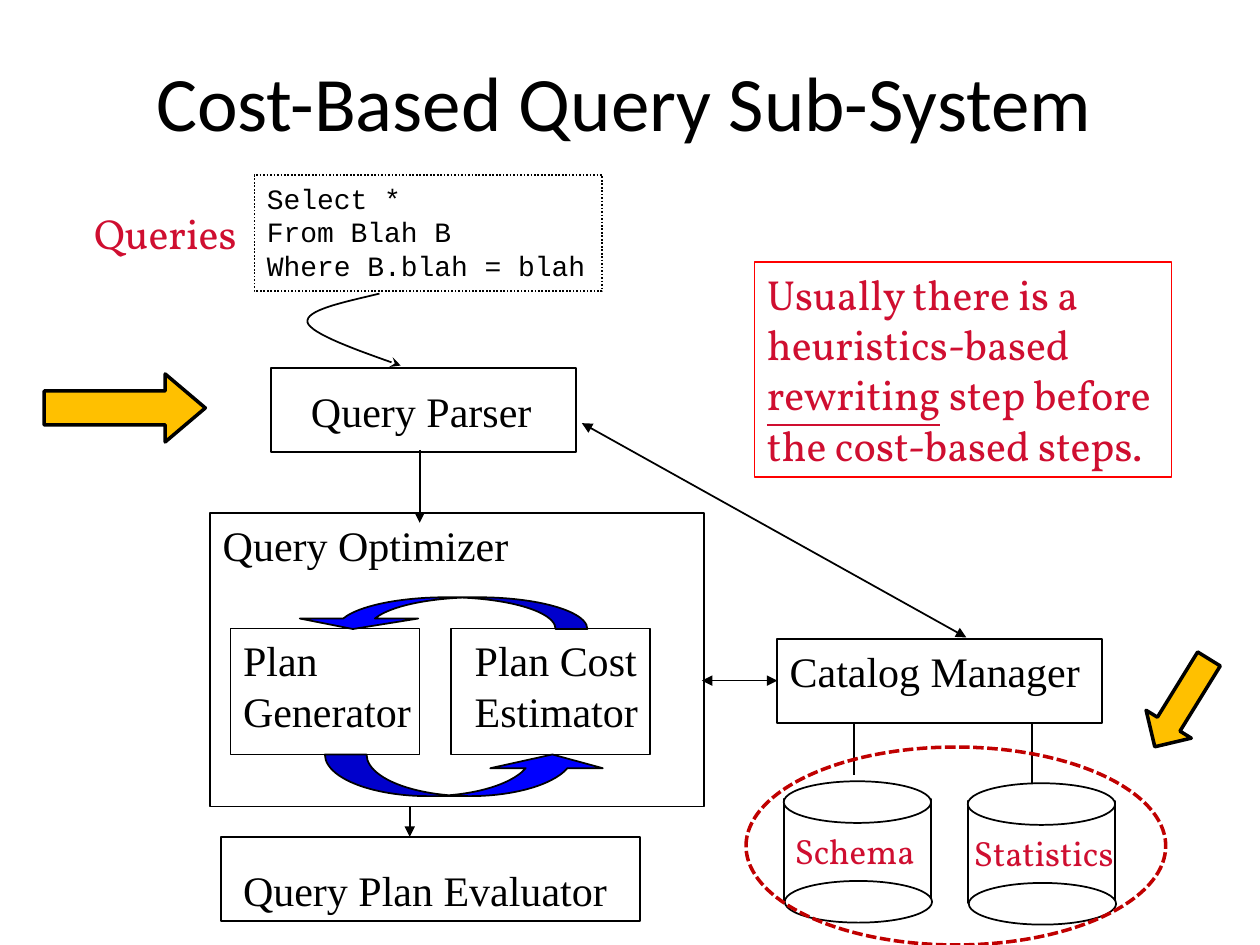
from lxml import etree
from pptx import Presentation
from pptx import util as u
from pptx.dml.color import RGBColor
from pptx.enum import dml, shapes, text
from pptx.oxml import ns

COLORS = {
    "black": "000000", "white": "FFFFFF", "blue": "0000FF", "gold": "FFC000",
    "red": "FF0000", "crimson": "CF0E30", "dark_red": "C00000",
}
SERIF, ACCENT = "Times New Roman", "Vollkorn"
PRESET = shapes.MSO_SHAPE
DASH = dml.MSO_LINE


def color(name):
    return RGBColor.from_string(COLORS[name])


def cm(values):
    return [u.Cm(value) for value in values]


def write_text(shape, lines, font=SERIF, size=24, fill="black", wrap=True,
               align=text.PP_ALIGN.LEFT, anchor=text.MSO_ANCHOR.TOP):
    frame = shape.text_frame
    frame.word_wrap = wrap
    frame.vertical_anchor = anchor
    for index, line in enumerate(lines):
        paragraph = frame.add_paragraph() if index else frame.paragraphs[0]
        paragraph.alignment = align
        for content, underline in [(line, None)] if isinstance(line, str) else line:
            run = paragraph.add_run()
            run.text = content
            run.font.name = font
            run.font.size = u.Pt(size)
            run.font.underline = underline
            run.font.color.rgb = color(fill)


def add_label(slide, box, *lines, **style):
    write_text(slide.shapes.add_textbox(*cm(box)), lines, **style)


def format_shape(shape, fill=None, line="black", width=1, dash=None):
    shape.shadow.inherit = False
    if fill:
        shape.fill.solid()
        shape.fill.fore_color.rgb = color(fill)
    else:
        shape.fill.background()
    shape.line.color.rgb = color(line)
    shape.line.width = u.Pt(width)
    if dash:
        shape.line.dash_style = dash


def add_preset(slide, preset, box, rotation=0, adjustments=(), **style):
    shape = slide.shapes.add_shape(preset, *cm(box))
    format_shape(shape, **style)
    shape.rotation = rotation
    for index, value in enumerate(adjustments):
        shape.adjustments[index] = value
    return shape


def add_box(slide, box, **style):
    return add_preset(slide, PRESET.RECTANGLE, box, **style)


def add_arrowheads(shape, **ends):
    for end, kind in ends.items():
        etree.SubElement(shape.line._get_or_add_ln(), ns.qn(f"a:{end}"), type=kind)


def add_line(slide, start, end, **ends):
    connector = slide.shapes.add_connector(
        shapes.MSO_CONNECTOR.STRAIGHT, *cm(start + end))
    connector.line.color.rgb = color("black")
    connector.line.width = u.Pt(1)
    add_arrowheads(connector, **ends)
    etree.SubElement(connector._element.spPr, ns.qn("a:effectLst"))


def bezier(controls, steps=16):
    weights = (1, 3, 3, 1)
    for step in range(1, steps + 1):
        t = step / steps
        yield tuple(
            u.Cm(sum(weight * (1 - t) ** (3 - i) * t ** i * point[axis]
                     for i, (weight, point) in enumerate(zip(weights, controls))))
            for axis in (0, 1))


def add_curve(slide, points):
    builder = slide.shapes.build_freeform(*cm(points[0]))
    for first in range(0, len(points) - 1, 3):
        builder.add_line_segments(bezier(points[first:first + 4]), close=False)
    curve = builder.convert_to_shape()
    format_shape(curve)
    add_arrowheads(curve, tailEnd="stealth")


def add_cylinder(slide, left, top):
    width, cap = 2.97, 0.84
    add_box(slide, (left, top + 0.36, width, 2.06), fill="white")
    for x, y in ((left, top), (left + 0.02, top + 2.01)):
        add_preset(slide, PRESET.OVAL, (x, y, width, cap), fill="white")


def add_title(slide):
    title = slide.shapes.title
    title.left, title.top, title.width, title.height = cm((0.2, 0.43, 24.77, 3.18))
    write_text(title, ["Cost-Based Query Sub-System"], font="Calibri", size=44,
               align=text.PP_ALIGN.CENTER, anchor=text.MSO_ANCHOR.MIDDLE)


def add_components(slide):
    for label, label_box, frame_box in (
        ("Query Parser", (6.02, 7.65, 5.72, 1.27), (5.46, 7.42, 6.15, 1.7)),
        ("Query Optimizer", (4.24, 10.34, 9.96, 1.27), (4.24, 10.34, 9.96, 5.92)),
        ("Plan Generator", (4.65, 12.67, 4.65, 2.29), (4.65, 12.67, 3.81, 2.54)),
        ("Plan Cost Estimator", (9.32, 12.67, 5.72, 2.29), (9.09, 12.67, 4.01, 2.54)),
        ("Query Plan Evaluator", (4.65, 17.3, 11, 1.27), (4.45, 16.87, 8.46, 1.7)),
        ("Catalog Manager", (15.67, 12.88, 6.78, 1.27), (15.67, 12.88, 6.55, 1.7)),
    ):
        add_box(slide, frame_box)
        add_label(slide, label_box, label)
    for box, rotation, adjustments in (
        ((6.55, 15.21, 5.72, 0.84), 0, (1.35, 2.7, 0.33)),
        ((5.92, 12.04, 5.92, 0.64), 180, (1.87, 3.73, 0.33)),
    ):
        add_preset(slide, PRESET.CURVED_UP_ARROW, box, rotation, adjustments,
                   fill="blue")


def add_catalog_stores(slide):
    for name, left, top, label_box in (
        ("Schema", 15.8, 15.75, (15.77, 16.59, 3.1, 1.09)),
        ("Statistics", 19.51, 15.79, (19.38, 16.64, 3.48, 1.09)),
    ):
        add_cylinder(slide, left, top)
        add_label(slide, label_box, name, font=ACCENT, size=20, fill="crimson")


def add_connections(slide):
    triangle = "triangle"
    for start, end in (((8.26, 16.26), (8.26, 16.87)), ((8.46, 9.07), (8.46, 10.54))):
        add_line(slide, start, end, tailEnd=triangle)
    for start, end in (((14.15, 13.72), (15.67, 13.72)),
                       ((11.73, 8.53), (19.48, 12.85))):
        add_line(slide, start, end, headEnd=triangle, tailEnd=triangle)
    for start, end in (((17.22, 14.6), (17.22, 15.62)), ((20.8, 14.58), (20.8, 15.8))):
        add_line(slide, start, end)
    add_curve(slide, [(7.65, 5.92), (6.91, 6.1), (6.15, 6.25), (6.2, 6.5),
                      (6.27, 6.73), (7.19, 7.06), (8.08, 7.37)])


def add_query_and_note(slide):
    query = add_box(slide, (5.13, 3.53, 7.01, 2.34), dash=DASH.ROUND_DOT)
    write_text(query, ["Select *", "From Blah B", "Where B.blah = blah"],
               font="Courier New", size=16, wrap=False)
    add_label(slide, (1.65, 4.06, 3.43, 1.27), "Queries",
              font=ACCENT, fill="crimson", wrap=False)
    note = add_box(slide, (15.21, 5.28, 8.41, 4.34), line="red")
    write_text(note, ["Usually there is a", "heuristics-based",
                      [("rewriting", True), (" step before", False)],
                      "the cost-based steps."],
               font=ACCENT, fill="crimson", wrap=False)


def add_highlights(slide):
    add_preset(slide, PRESET.RIGHT_ARROW, (0.89, 7.54, 3.25, 1.37),
               adjustments=(0.5, 0.59), fill="gold", width=2)
    add_preset(slide, PRESET.OVAL, (15.04, 15.06, 8.46, 3.99),
               line="dark_red", width=2, dash=DASH.SQUARE_DOT).line
    add_preset(slide, PRESET.DOWN_ARROW, (23.29, 13.13, 1.07, 2.08),
               rotation=31.7, fill="gold", width=2)


def main():
    presentation = Presentation()
    presentation.slide_width, presentation.slide_height = cm((25.4, 19.05))
    slide = presentation.slides.add_slide(presentation.slide_layouts[5])
    add_title(slide)
    add_components(slide)
    add_catalog_stores(slide)
    add_connections(slide)
    add_query_and_note(slide)
    add_highlights(slide)
    presentation.save("out.pptx")


if __name__ == "__main__":
    main()
